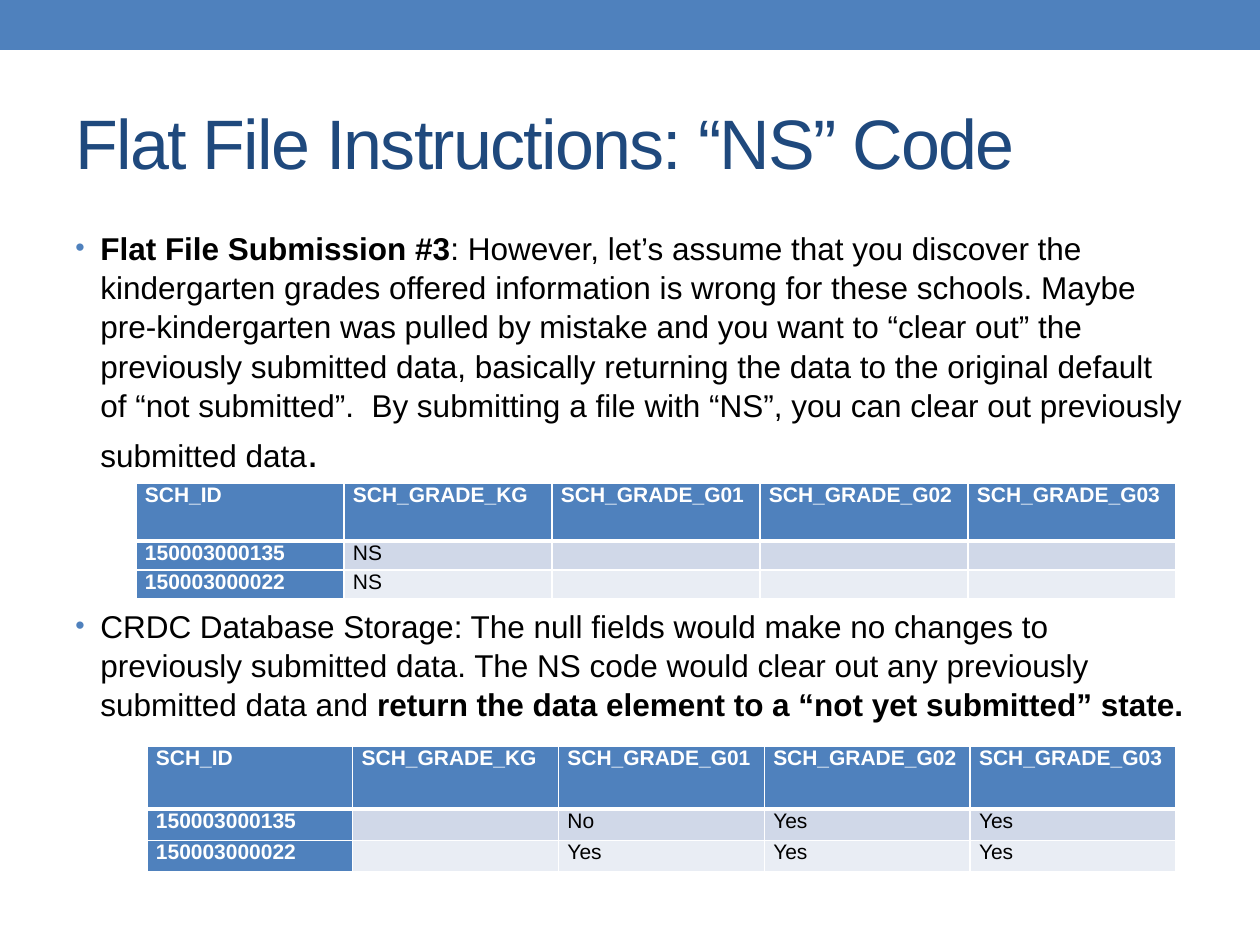
from dataclasses import dataclass

from lxml.etree import SubElement
from pptx import Presentation
from pptx.dml.color import RGBColor
from pptx.enum.shapes import MSO_SHAPE
from pptx.enum.text import MSO_ANCHOR
from pptx.oxml.ns import qn
from pptx.util import Emu, Pt


@dataclass(frozen=True)
class Theme:
    font: str = "Arial"
    accent: str = "4F81BD"
    title: str = "1F497D"
    body: str = "000000"
    white: str = "FFFFFF"
    bands: tuple = ("D0D8E8", "E9EDF4")
    title_size: int = 40
    body_size: int = 18
    large_size: int = 24
    table_size: int = 12
    line_spacing: float = 1.04
    border: int = 1
    header_border: int = 3


def px(length):
    return Emu(round(length * 914400 / 126))


class SlideBuilder:
    def __init__(self, slide, theme):
        self.slide = slide
        self.theme = theme

    def add_run(self, paragraph, text, size, color, bold=False):
        run = paragraph.add_run()
        run.text = text
        run.font.name = self.theme.font
        run.font.size = Pt(size)
        run.font.bold = bold
        run.font.color.rgb = RGBColor.from_string(color)
        return run

    def add_bar(self, left, top, width, height):
        shape = self.slide.shapes.add_shape(
            MSO_SHAPE.RECTANGLE, px(left), px(top), px(width), px(height))
        shape.shadow.inherit = False
        shape.fill.solid()
        shape.fill.fore_color.rgb = RGBColor.from_string(self.theme.accent)
        shape.line.fill.background()

    def add_text_frame(self, left, top, width, height):
        box = self.slide.shapes.add_textbox(px(left), px(top), px(width), px(height))
        box.text_frame.word_wrap = True
        return box.text_frame

    def add_title(self, left, top, width, height, text):
        frame = self.add_text_frame(left, top, width, height)
        frame.vertical_anchor = MSO_ANCHOR.MIDDLE
        run = self.add_run(frame.paragraphs[0], text, self.theme.title_size, self.theme.title)
        run.font._element.set("spc", "-100")

    def add_bullet(self, left, top, width, height, runs):
        paragraph = self.add_text_frame(left, top, width, height).paragraphs[0]
        paragraph.line_spacing = self.theme.line_spacing
        paragraph.space_before = Pt(self.theme.body_size * 0.2)
        properties = paragraph._p.get_or_add_pPr()
        properties.set("marL", str(px(25)))
        properties.set("indent", str(-px(25)))
        color = SubElement(properties, qn("a:buClr"))
        SubElement(color, qn("a:srgbClr"), val=self.theme.accent)
        SubElement(properties, qn("a:buSzPct"), val="85000")
        SubElement(properties, qn("a:buFont"), typeface=self.theme.font)
        SubElement(properties, qn("a:buChar"), char="•")
        for text, size, bold in runs:
            self.add_run(paragraph, text, size, self.theme.body, bold)

    def add_borders(self, cell, row_index):
        theme = self.theme
        top = theme.header_border if row_index == 1 else theme.border
        bottom = theme.header_border if row_index == 0 else theme.border
        widths = {"lnL": theme.border, "lnR": theme.border, "lnT": top, "lnB": bottom}
        properties = cell._tc.get_or_add_tcPr()
        for side, width in widths.items():
            line = SubElement(properties, qn(f"a:{side}"), w=str(Pt(width)))
            fill = SubElement(line, qn("a:solidFill"))
            SubElement(fill, qn("a:srgbClr"), val=theme.white)

    def fill_cell(self, cell, text, row_index, column_index):
        theme = self.theme
        heading = row_index == 0 or column_index == 0
        cell.margin_left = cell.margin_right = px(9)
        cell.margin_top = cell.margin_bottom = 0
        self.add_borders(cell, row_index)
        cell.fill.solid()
        cell.fill.fore_color.rgb = RGBColor.from_string(
            theme.accent if heading else theme.bands[row_index - 1])
        paragraph = cell.text_frame.paragraphs[0]
        if text:
            self.add_run(paragraph, text, theme.table_size,
                         theme.white if heading else theme.body, heading)
        else:
            SubElement(paragraph._p, qn("a:endParaRPr"), sz=str(theme.table_size * 100))

    def add_table(self, left, top, width, height, rows):
        table = self.slide.shapes.add_table(
            len(rows), len(rows[0]), px(left), px(top), px(width), px(height)).table
        for row_index, values in enumerate(rows):
            table.rows[row_index].height = px(height / (2 if row_index == 0 else 4))
            for column_index, text in enumerate(values):
                self.fill_cell(table.cell(row_index, column_index), text,
                               row_index, column_index)


def main():
    presentation = Presentation()
    presentation.slide_width = px(1260)
    presentation.slide_height = px(945)
    theme = Theme()
    builder = SlideBuilder(
        presentation.slides.add_slide(presentation.slide_layouts[6]), theme)
    header = ["SCH_ID", "SCH_GRADE_KG", "SCH_GRADE_G01", "SCH_GRADE_G02", "SCH_GRADE_G03"]
    schools = ["150003000135", "150003000022"]

    builder.add_bar(0, 0, 1260, 50)
    builder.add_title(63, 73, 1134, 136, "Flat File Instructions: “NS” Code")
    builder.add_bullet(63, 221, 1134, 252, [
        ("Flat File Submission #3", theme.body_size, True),
        (": However, let’s assume that you discover the kindergarten grades offered "
         "information is wrong for these schools. Maybe pre-kindergarten was pulled by "
         "mistake and you want to “clear out” the previously submitted data, basically "
         "returning the data to the original default of “not submitted”.  By submitting "
         "a file with “NS”, you can clear out previously submitted data",
         theme.body_size, False),
        (".", theme.large_size, False),
    ])
    builder.add_table(136, 483, 1040, 116, [
        header,
        [schools[0], "NS", "", "", ""],
        [schools[1], "NS", "", "", ""],
    ])
    builder.add_bullet(63, 599, 1134, 126, [
        ("CRDC Database Storage: The null fields would make no changes to previously "
         "submitted data. The NS code would clear out any previously submitted data and ",
         theme.body_size, False),
        ("return the data element to a “not yet submitted” state.", theme.body_size, True),
    ])
    builder.add_table(147, 746, 1029, 126, [
        header,
        [schools[0], "", "No", "Yes", "Yes"],
        [schools[1], "", "Yes", "Yes", "Yes"],
    ])
    presentation.save("out.pptx")


if __name__ == "__main__":
    main()
